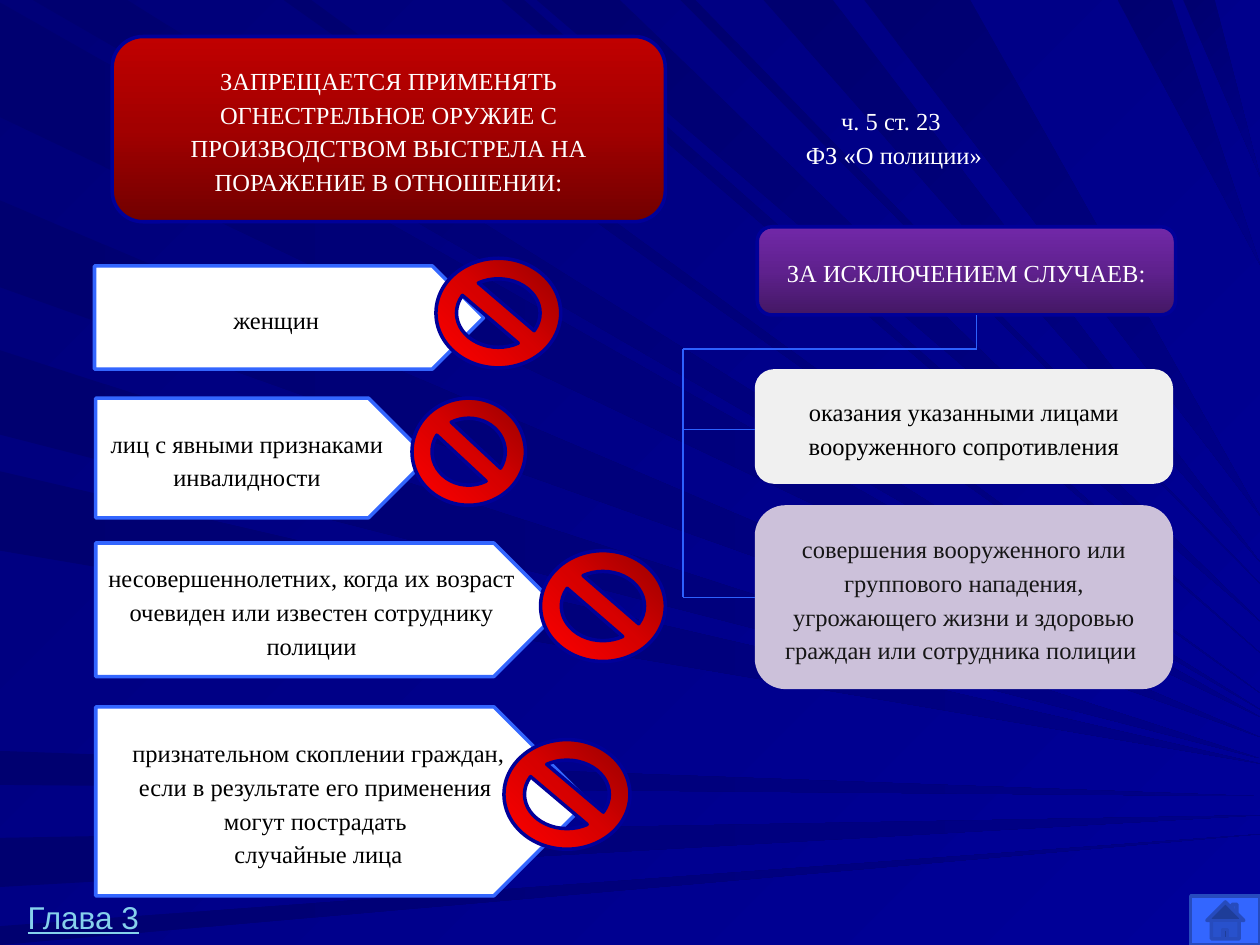
from copy import deepcopy

from lxml.etree import SubElement
from pptx import Presentation
from pptx.dml.color import RGBColor
from pptx.enum.shapes import MSO_CONNECTOR, MSO_SHAPE
from pptx.enum.text import MSO_ANCHOR, PP_ALIGN
from pptx.oxml.ns import qn
from pptx.util import Pt

PX = 9144  # EMU per px, 100 px to the inch
WIDTH, HEIGHT = 1000, 750

WHITE = RGBColor.from_string("FFFFFF")
BLACK = RGBColor.from_string("000000")
INK = RGBColor.from_string("161616")
NAVY = RGBColor.from_string("000099")
DEEP_NAVY = RGBColor.from_string("000078")
RAY_DARK = RGBColor.from_string("000070")
RAY_LIGHT = RGBColor.from_string("000088")
BLUE = RGBColor.from_string("3366FF")
DARK_BLUE = RGBColor.from_string("264BBD")
BRANCH_BLUE = RGBColor.from_string("2D61FE")
LINK_BLUE = RGBColor.from_string("86D1EC")
PALE_GREY = RGBColor.from_string("F0F0F0")
LILAC = RGBColor.from_string("CCC1DA")
DARK_REDS = [RGBColor.from_string(c) for c in ("720000", "A20000", "C00000")]
BRIGHT_REDS = [RGBColor.from_string(c) for c in ("970000", "D70000", "FF0000")]
PURPLES = [RGBColor.from_string(c) for c in ("431764", "5F218E", "7128A8")]


def paint(owner, colors, angle=0):
    """Fill with one colour, or with an even gradient; angle runs clockwise."""
    fill = owner.fill
    if len(colors) == 1:
        fill.solid()
        fill.fore_color.rgb = colors[0]
        return
    fill.gradient()
    fill.gradient_angle = (360 - angle) % 360
    if len(colors) == 3:
        stop_list = owner.element.xpath(".//a:gsLst")[0]
        stop_list.insert(1, deepcopy(stop_list[0]))
    for i, (stop, color) in enumerate(zip(fill.gradient_stops, colors)):
        stop.position = i / (len(colors) - 1)
        stop.color.rgb = color


def write(shape, text, color=BLACK, size=14, font="Times New Roman", align=PP_ALIGN.CENTER,
          anchor=MSO_ANCHOR.MIDDLE, spacing=1.15, wrap=True, underline=None):
    frame = shape.text_frame
    frame.word_wrap = wrap
    frame.vertical_anchor = anchor
    for i, line in enumerate(text):
        paragraph = frame.add_paragraph() if i else frame.paragraphs[0]
        paragraph.text = line
        paragraph.alignment = align
        paragraph.line_spacing = spacing
        for run in paragraph.runs:
            run.font.name = font
            run.font.size = Pt(size)
            run.font.color.rgb = color
            run.font.underline = underline


deck = Presentation()
deck.slide_width, deck.slide_height = WIDTH * PX, HEIGHT * PX
slide = deck.slides.add_slide(deck.slide_layouts[6])
shapes = slide.shapes
paint(slide.background, [DEEP_NAVY, NAVY], 45)

# Background rays narrow to the right edge: start and end on the left or top edge, height of tip
LEFT_RAYS = [(2, 93, 569), (159, 228, 585), (278, 345, 602), (374, 437, 606),
             (596, 623, 632), (665, 704, 647), (735, 750, 662)]
TOP_RAYS = [(26, 101, 563), (225, 247, 550), (398, 416, 518), (426, 492, 493), (540, 552, 463),
            (606, 661, 446), (686, 770, 409), (887, 930, 210), (939, 964, 140)]
rays = [((0, start), (0, end), tip, 0) for start, end, tip in LEFT_RAYS]
rays += [((start, 0), (end, 0), tip, 45) for start, end, tip in TOP_RAYS]
for start, end, tip, angle in rays:
    builder = shapes.build_freeform(*start, scale=PX)
    builder.add_line_segments([end, (WIDTH, tip)], close=True)
    ray = builder.convert_to_shape()
    ray.shadow.inherit = False
    ray.line.fill.background()
    paint(ray, [RAY_DARK, RAY_LIGHT], angle)

# Heading, banned targets, ban signs, exceptions and home button:
# preset, place, fill, outline, text, text colour
HOME, ROUND = MSO_SHAPE.ACTION_BUTTON_HOME, MSO_SHAPE.ROUNDED_RECTANGLE
TARGET, BAN = MSO_SHAPE.PENTAGON, MSO_SHAPE.NO_SYMBOL
PARTS = [
    (HOME, (945, 711, 55, 39), [BLUE], DARK_BLUE, [], WHITE),
    (ROUND, (89, 29, 439, 147), DARK_REDS, NAVY,
     ["ЗАПРЕЩАЕТСЯ ПРИМЕНЯТЬ ОГНЕСТРЕЛЬНОЕ ОРУЖИЕ С ПРОИЗВОДСТВОМ ВЫСТРЕЛА НА "
      "ПОРАЖЕНИЕ В ОТНОШЕНИИ:"], WHITE),
    (TARGET, (75, 211, 309, 82), [WHITE], BLUE, ["женщин"], BLACK),
    (TARGET, (76, 316, 264, 95), [WHITE], BLUE,
     ["лиц с явными признаками инвалидности"], BLACK),
    (TARGET, (76, 431, 369, 106), [WHITE], BLUE,
     ["несовершеннолетних, когда их возраст очевиден или известен сотруднику полиции"], BLACK),
    (TARGET, (76, 561, 391, 150), [WHITE], BLUE,
     ["признательном скоплении граждан, если в результате его применения \nмогут пострадать ",
      "случайные лица"], BLACK),
    (BAN, (346, 205, 99, 87), BRIGHT_REDS, NAVY, [], WHITE),
    (BAN, (327, 316, 90, 85), BRIGHT_REDS, NAVY, [], WHITE),
    (BAN, (429, 437, 99, 88), BRIGHT_REDS, NAVY, [], WHITE),
    (BAN, (400, 587, 100, 87), BRIGHT_REDS, NAVY, [], WHITE),
    (ROUND, (601, 180, 332, 70), PURPLES, NAVY, ["ЗА ИСКЛЮЧЕНИЕМ СЛУЧАЕВ:"], WHITE),
    (ROUND, (599, 293, 332, 91), [PALE_GREY], None,
     ["оказания указанными лицами вооруженного сопротивления"], BLACK),
    (ROUND, (599, 401, 332, 146), [LILAC], None,
     ["совершения вооруженного или группового нападения, угрожающего жизни и здоровью "
      "граждан или сотрудника полиции "], INK),
]
for preset, place, colors, outline, text, text_color in PARTS:
    part = shapes.add_shape(preset, *(n * PX for n in place))
    part.shadow.inherit = False
    paint(part, colors, 135 if preset == BAN else 270)
    if outline is None:
        part.line.fill.background()
    else:
        part.line.color.rgb = outline
        part.line.width = Pt(2)
    if text:
        write(part, text, color=text_color)
attack_exception = part

# Branches from the exceptions heading to its two cases
stem, trunk, case_edge = 775, 542, 599
turn, resistance, attack = 277, 341, 474
BRANCHES = [
    (stem, 250, stem, turn),
    (stem, turn, trunk, turn),
    (trunk, turn, trunk, attack),
    (trunk, resistance, case_edge, resistance),
    (trunk, attack, case_edge, attack),
]
for ends in BRANCHES:
    branch = shapes.add_connector(MSO_CONNECTOR.STRAIGHT, *(n * PX for n in ends))
    branch.line.color.rgb = BRANCH_BLUE
    branch.line.width = Pt(0.75)
    SubElement(branch.element.spPr, qn("a:effectLst"))
branch.end_connect(attack_exception, 1)

# Law reference and chapter label
law_reference = shapes.add_textbox(529 * PX, 76 * PX, 361 * PX, 84 * PX)
write(law_reference, ["ч. 5 ст. 23 ", "ФЗ «О полиции»"], color=WHITE, anchor=MSO_ANCHOR.TOP)
chapter = shapes.add_textbox(12 * PX, 708 * PX, 109 * PX, 40 * PX)
write(chapter, ["Глава 3"], color=LINK_BLUE, size=18, font="Arial", align=PP_ALIGN.LEFT,
      anchor=MSO_ANCHOR.TOP, spacing=1.0, wrap=False, underline=True)

deck.save("out.pptx")
